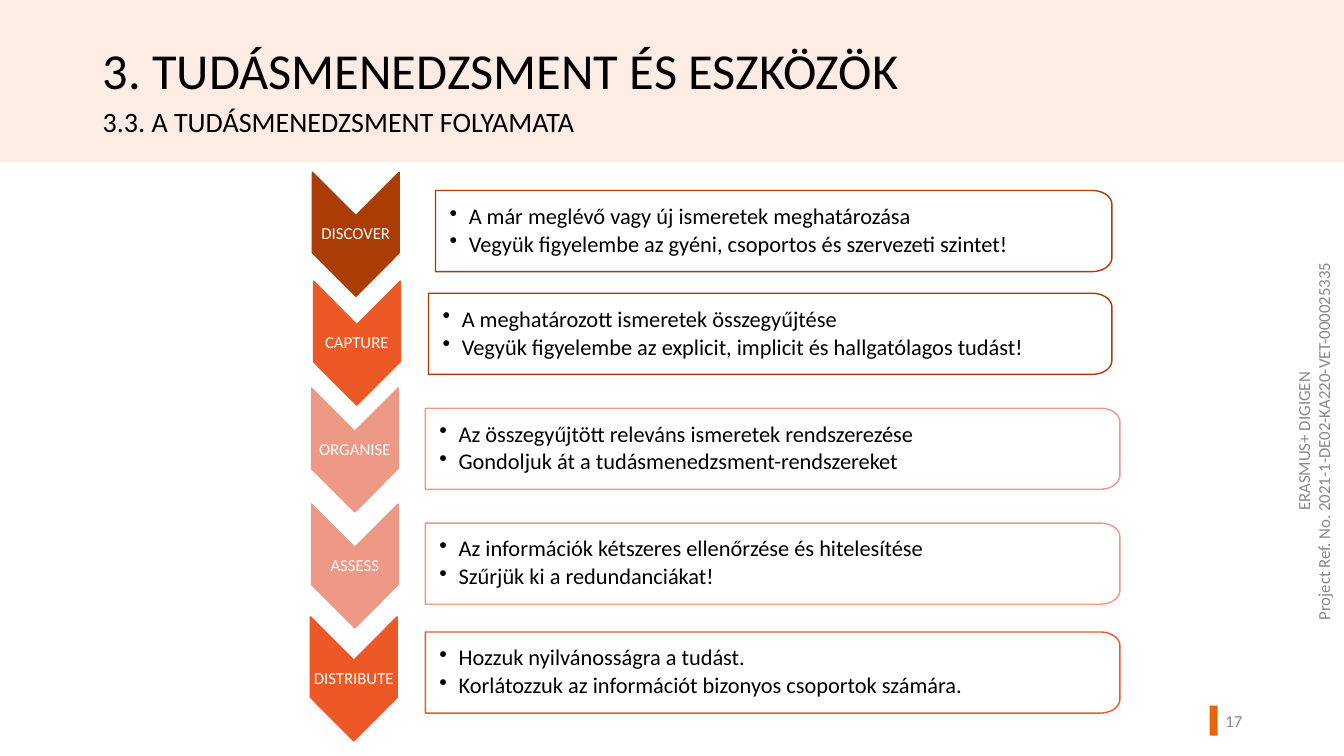
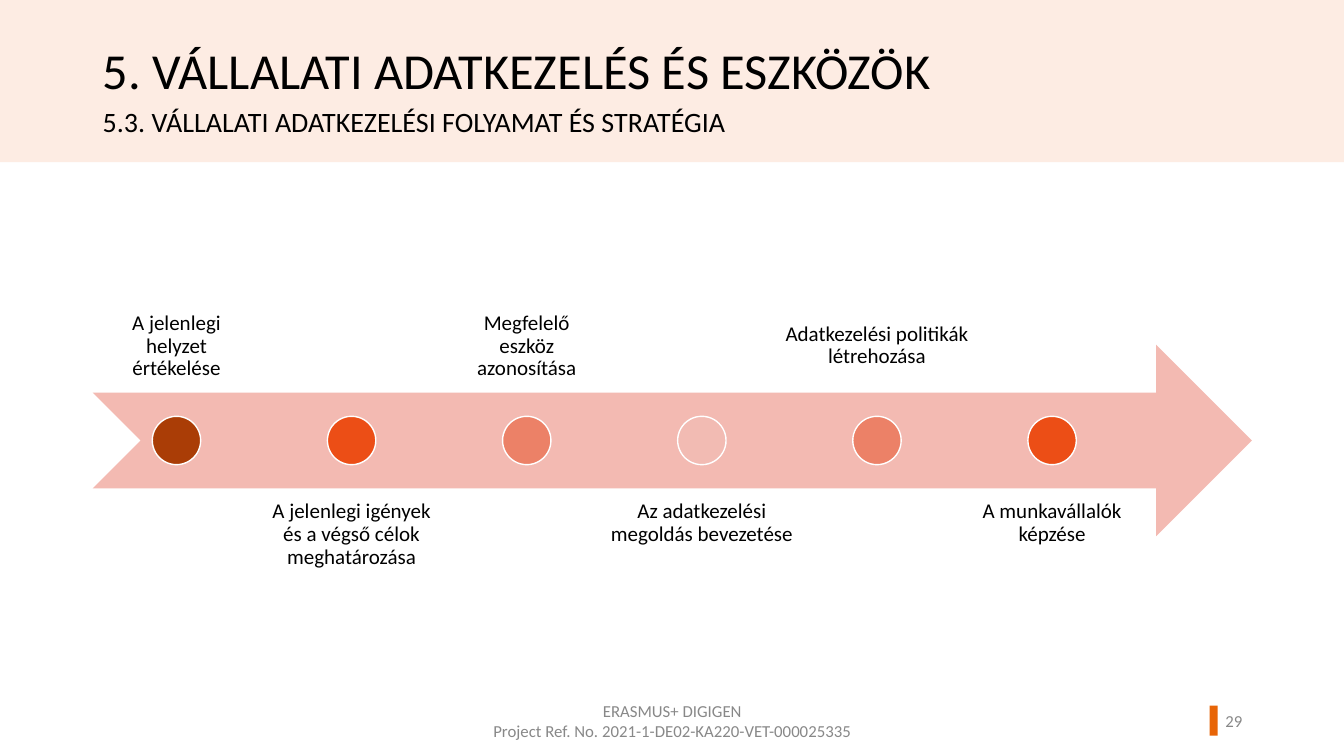
import math

from pptx import Presentation
from pptx.dml.color import RGBColor
from pptx.enum.shapes import MSO_SHAPE
from pptx.enum.text import MSO_ANCHOR, MSO_AUTO_SIZE, PP_ALIGN
from pptx.oxml.ns import qn
from pptx.util import Inches, Pt
from lxml import etree

RECTANGLE, OVAL = MSO_SHAPE.RECTANGLE, MSO_SHAPE.OVAL
NOTCHED_ARROW = MSO_SHAPE.NOTCHED_RIGHT_ARROW
TOP, MIDDLE, BOTTOM = MSO_ANCHOR.TOP, MSO_ANCHOR.MIDDLE, MSO_ANCHOR.BOTTOM
LEFT, CENTER, RIGHT = PP_ALIGN.LEFT, PP_ALIGN.CENTER, PP_ALIGN.RIGHT

SLIDE_WIDTH, SLIDE_HEIGHT = Inches(13.33), Inches(7.5)
FONT = "Calibri"
BLACK, WHITE, GREY = "000000", "FFFFFF", "888888"
BAND, ACCENT = "FDECE3", "E86507"
BROWN, ORANGE, SALMON = "AA3D06", "EC5826", "EE9886"
ARROW, VIVID, CORAL, PALE = "F3BAB2", "EC4E16", "EC8167", "F2BBB3"

FOOTER = ["ERASMUS+ DIGIGEN", "Project Ref. No. 2021-1-DE02-KA220-VET-000025335"]
FOOTER_ROW, FOOTER_WIDTH, FOOTER_HEIGHT = 92.67, 33.75, 5.33
TEXT_LEFT, TEXT_WIDTH, TEXT_HEIGHT = 6.9, 81.4, 11.33

# Name, fill, chevron left and top, panel outline, panel left, top and right, points
STEPS = [
    ("DISCOVER", BROWN, 23.25, 22.8, BROWN, 32.4, 25.2, 82.73,
     ["A már meglévő vagy új ismeretek meghatározása",
      "Vegyük figyelembe az gyéni, csoportos és szervezeti szintet!"]),
    ("CAPTURE", ORANGE, 23.33, 37.2, BROWN, 31.88, 38.8, 82.73,
     ["A meghatározott ismeretek összegyűjtése",
      "Vegyük figyelembe az explicit, implicit és hallgatólagos tudást!"]),
    ("ORGANISE", SALMON, 23.18, 51.33, SALMON, 31.65, 54, 83.33,
     ["Az összegyűjtött releváns ismeretek rendszerezése",
      "Gondoljuk át a tudásmenedzsment-rendszereket"]),
    ("ASSESS", SALMON, 23.18, 66.67, SALMON, 31.65, 69.2, 83.33,
     ["Az információk kétszeres ellenőrzése és hitelesítése",
      "Szűrjük ki a redundanciákat!"]),
    ("DISTRIBUTE", ORANGE, 23.1, 81.6, ORANGE, 31.65, 83.6, 83.33,
     ["Hozzuk nyilvánosságra a tudást.",
      "Korlátozzuk az információt bizonyos csoportok számára."]),
]

# Label, dot colour, label width, lift of the label
MILESTONES = [
    ("A jelenlegi helyzet értékelése", BROWN, 12.45, 0),
    ("A jelenlegi igények és a végső célok meghatározása", VIVID, 14.78, 0),
    ("Megfelelő eszköz azonosítása", CORAL, 12.45, 0),
    ("Az adatkezelési megoldás bevezetése", PALE, 17.48, 0),
    ("Adatkezelési politikák létrehozása", CORAL, 15.83, 1.6),
    ("A munkavállalók képzése", VIVID, 12.45, 0),
]


def across(percent):
    return round(SLIDE_WIDTH * percent / 100)


def down(percent):
    return round(SLIDE_HEIGHT * percent / 100)


def frame(left, top, width, height):
    """Turn shares of the slide, in percent, into lengths."""
    return across(left), down(top), across(width), down(height)


def color(code):
    return RGBColor.from_string(code)


def paint(shape, fill, line=None):
    shape.shadow.inherit = False
    shape.fill.solid()
    shape.fill.fore_color.rgb = color(fill)
    if line:
        shape.line.color.rgb = color(line)
        shape.line.width = Pt(1)
    else:
        shape.line.fill.background()
    return shape


def add_bullet(para):
    properties = para._p.get_or_add_pPr()
    properties.set("marL", str(Inches(0.19)))
    properties.set("indent", str(-Inches(0.19)))
    etree.SubElement(properties, qn("a:buChar")).set("char", "•")


def write(shape, lines, size=12, ink=BLACK, align=LEFT, anchor=TOP,
          insets=(0.1, 0.05, 0.1, 0.05), spacing=0.9, gap=0, bullets=False):
    """Fill a shape with one paragraph a line; insets are in inches."""
    text = shape.text_frame
    text.word_wrap = True
    text.auto_size = MSO_AUTO_SIZE.NONE
    text.vertical_anchor = anchor
    (text.margin_left, text.margin_top,
     text.margin_right, text.margin_bottom) = map(Inches, insets)
    for index, line in enumerate(lines):
        para = text.add_paragraph() if index else text.paragraphs[0]
        if bullets:
            add_bullet(para)
        para.alignment = align
        para.line_spacing = spacing
        para.space_before = Pt(gap if index else 0)
        span = para.add_run()
        span.text = line
        span.font.name = FONT
        span.font.size = Pt(size)
        span.font.color.rgb = color(ink)


def add_text(page, area, lines, **style):
    box = page.shapes.add_textbox(*frame(*area))
    write(box, lines, **style)
    return box


def add_preset(page, kind, area, fill, line=None):
    return paint(page.shapes.add_shape(kind, *frame(*area)), fill, line)


def add_outline(page, points, fill, line):
    corners = [(across(x), down(y)) for x, y in points]
    builder = page.shapes.build_freeform(*corners[0])
    builder.add_line_segments(corners[1:], close=True)
    return paint(builder.convert_to_shape(), fill, line)


def add_chevron(page, left, top, fill, name):
    width, height = 6.45, 16.4
    middle, right = left + width / 2, left + width
    notch, shoulder = top + height * 0.35, top + height * 0.65
    shape = add_outline(page, [
        (left, top), (middle, notch), (right, top),
        (right, shoulder), (middle, top + height), (left, shoulder)], fill, fill)
    write(shape, [name], ink=WHITE, align=CENTER, anchor=MIDDLE,
          insets=(0.01, 0.44, 0.01, 0.44))


def add_panel(page, left, top, right, line, points):
    """Draw a bulleted box whose two right corners are rounded."""
    bottom = top + 10.73
    radius_x, radius_y = 1.45, 1.83
    turns = [math.radians(angle) for angle in range(0, 91, 10)]
    upper = [(right - radius_x * (1 - math.sin(turn)),
              top + radius_y * (1 - math.cos(turn))) for turn in turns]
    lower = [(x, top + bottom - y) for x, y in reversed(upper)]
    shape = add_outline(page, [(left, top), *upper, *lower, (left, bottom)],
                        WHITE, line)
    write(shape, points, size=16, anchor=MIDDLE, gap=2.7, bullets=True,
          insets=(0.14, 0.05, 0.05, 0.05))


def decorate_layout(layout, page):
    """Draw the shared band and accent, then move them to the layout."""
    band = add_preset(page, RECTANGLE, (0, 0, 100, 21.47), BAND)
    accent = add_preset(page, RECTANGLE, (90, 93.33, 0.6, 4), ACCENT)
    for position, shape in enumerate((band, accent), start=2):
        layout.shapes.element.insert(position, shape.element)


def add_page(deck, layout, title, subtitle, number, footer_left, footer_top, turn=0):
    page = deck.slides.add_slide(layout)
    heading = page.shapes.title
    heading.left, heading.top, heading.width, heading.height = frame(
        TEXT_LEFT, 5.47, TEXT_WIDTH, TEXT_HEIGHT)
    write(heading, [title], size=36)
    add_text(page, (TEXT_LEFT, 13.73, TEXT_WIDTH, TEXT_HEIGHT), [subtitle], size=20)
    small = {"ink": GREY, "anchor": MIDDLE, "spacing": 1.0}
    footer = add_text(page, (footer_left, footer_top, FOOTER_WIDTH, FOOTER_HEIGHT),
                      FOOTER, align=CENTER, **small)
    footer.rotation = turn
    add_text(page, (88.3, FOOTER_ROW, 4.88, FOOTER_HEIGHT), [str(number)],
             align=RIGHT, **small)
    return page


def add_process(page):
    for name, fill, left, top, line, panel_left, panel_top, panel_right, points in STEPS:
        add_chevron(page, left, top, fill, name)
        add_panel(page, panel_left, panel_top, panel_right, line, points)


def add_timeline(page):
    arrow_top, arrow_height = 45.6, 25.33
    dot_width, dot_height = 3.6, 6.4
    first_center, pitch = 13.13, 13.03
    body_top = arrow_top + arrow_height / 4
    body_bottom = arrow_top + arrow_height * 3 / 4
    dot_top = arrow_top + (arrow_height - dot_height) / 2
    add_preset(page, NOTCHED_ARROW, (TEXT_LEFT, arrow_top, 86.25, arrow_height), ARROW)
    for index, (label, fill, width, lift) in enumerate(MILESTONES):
        center = first_center + index * pitch
        above = index % 2 == 0
        top = body_top - arrow_height - lift if above else body_bottom
        add_text(page, (center - width / 2, top, width, arrow_height), [label],
                 size=15, align=CENTER, anchor=BOTTOM if above else TOP,
                 insets=(0.12,) * 4)
        add_preset(page, OVAL, (center - dot_width / 2, dot_top, dot_width, dot_height),
                   fill, WHITE)


def main():
    deck = Presentation()
    deck.slide_width, deck.slide_height = SLIDE_WIDTH, SLIDE_HEIGHT
    layout = deck.slide_layouts.get_by_name("Title Only")
    process = add_page(deck, layout, "3. TUDÁSMENEDZSMENT ÉS ESZKÖZÖK",
                       "3.3. A TUDÁSMENEDZSMENT FOLYAMATA", 17, 80.85, 55.73, turn=270)
    decorate_layout(layout, process)
    add_process(process)
    timeline = add_page(deck, layout, "5. VÁLLALATI ADATKEZELÉS ÉS ESZKÖZÖK",
                        "5.3. VÁLLALATI ADATKEZELÉSI FOLYAMAT ÉS STRATÉGIA", 29,
                        33.15, FOOTER_ROW)
    add_timeline(timeline)
    deck.save("out.pptx")


if __name__ == "__main__":
    main()
